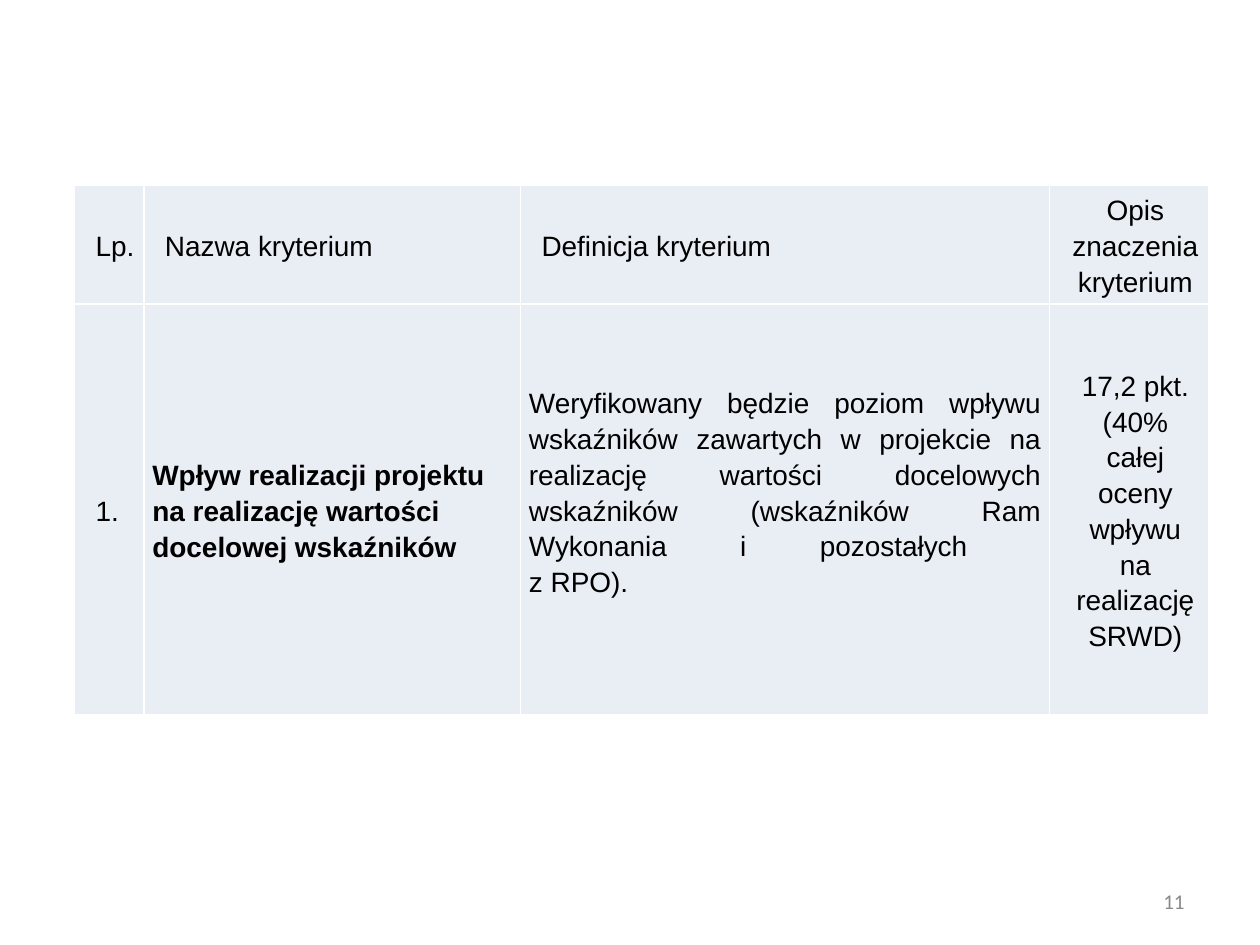
from lxml import etree
from pptx import Presentation
from pptx import util as u
from pptx.dml.color import RGBColor
from pptx.enum import text
from pptx.oxml.ns import qn

COLORS = {"cell": "E9EDF4", "border": "FFFFFF", "text": "000000", "number": "898989"}
LEFT, CENTER = text.PP_ALIGN.LEFT, text.PP_ALIGN.CENTER
RIGHT, JUSTIFY = text.PP_ALIGN.RIGHT, text.PP_ALIGN.JUSTIFY

COLUMNS = [39.6, 215.2, 302.4, 90.8]
ROWS = [68, 235]
CRITERIA = [
    [
        (["Lp."], {"indent": 7.2}),
        (["Nazwa kryterium"], {"indent": 7.2}),
        (["Definicja kryterium"], {"indent": 7.2}),
        (["Opis znaczenia kryterium"], {"indent": 7.2, "align": CENTER}),
    ],
    [
        (["1."], {"indent": 7.2}),
        (["Wpływ realizacji projektu na realizację wartości docelowej wskaźników"],
         {"bold": True}),
        (["Weryfikowany będzie poziom wpływu wskaźników zawartych w projekcie na "
          "realizację wartości docelowych wskaźników (wskaźników Ram Wykonania "
          "i pozostałych \vz RPO)."], {"align": JUSTIFY, "bottom": 21}),
        (["17,2 pkt.", "(40% całej oceny wpływu na realizację SRWD)"],
         {"indent": 7.2, "align": CENTER}),
    ],
]


def write(para, words, size=16, font="Arial", color="text", bold=False,
          align=LEFT, indent=0, spacing=1.15):
    """Fill a paragraph with formatted text."""
    para.text = words
    para.alignment = align
    para.line_spacing = spacing
    if indent:
        para._p.get_or_add_pPr().set("marL", str(u.Pt(indent)))
    for span in para.runs:
        span.font.size = u.Pt(size)
        span.font.name = font
        span.font.bold = bold
        span.font.color.rgb = RGBColor.from_string(COLORS[color])
    for line_break in para._p.findall(qn("a:br")):
        etree.SubElement(line_break, qn("a:rPr")).set("sz", str(size * 100))


class Page:
    """Hold the style and the current slide."""

    def __init__(self, deck):
        self.slide = deck.slides.add_slide(deck.slide_layouts[6])

    def label(self, words, left, top, width, height, **style):
        """Add a text box."""
        box = self.slide.shapes.add_textbox(*map(u.Pt, (left, top, width, height)))
        box.text_frame.word_wrap = True
        box.text_frame.vertical_anchor = text.MSO_ANCHOR.MIDDLE
        write(box.text_frame.paragraphs[0], words, **style)

    def table(self, rows, left, top, widths, heights):
        """Add a table of uniformly filled cells."""
        frame = self.slide.shapes.add_table(
            len(heights), len(widths),
            *map(u.Pt, (left, top, sum(widths), sum(heights))))
        table = frame.table
        for column, width in zip(table.columns, widths):
            column.width = u.Pt(width)
        for row, height in zip(table.rows, heights):
            row.height = u.Pt(height)
        for row, contents in zip(table.rows, rows):
            for cell, (lines, style) in zip(row.cells, contents):
                self.cell(cell, lines, **style)

    def cell(self, cell, lines, bottom=0, **style):
        """Format one table cell and write its lines."""
        cell.margin_left = cell.margin_right = u.Pt(4.9)
        cell.margin_top, cell.margin_bottom = u.Pt(0), u.Pt(bottom)
        cell.vertical_anchor = text.MSO_ANCHOR.MIDDLE
        self.borders(cell)
        cell.fill.solid()
        cell.fill.fore_color.rgb = RGBColor.from_string(COLORS["cell"])
        for index, line in enumerate(lines):
            frame = cell.text_frame
            write(frame.add_paragraph() if index else frame.paragraphs[0], line, **style)

    def borders(self, cell):
        """Draw the four borders of a cell."""
        properties = cell._tc.get_or_add_tcPr()
        for side in ("lnL", "lnR", "lnT", "lnB"):
            line = etree.SubElement(properties, qn(f"a:{side}"), w=str(u.Pt(1)))
            fill = etree.SubElement(line, qn("a:solidFill"))
            etree.SubElement(fill, qn("a:srgbClr"), val=COLORS["border"])


def main():
    """Build and save the slide."""
    deck = Presentation()
    deck.slide_width, deck.slide_height = u.Pt(720), u.Pt(540)
    page = Page(deck)
    page.label("11", 516, 500.5, 168, 28.8, size=12, font="Calibri",
               color="number", align=RIGHT, spacing=1.0)
    page.table(CRITERIA, 42.6, 105.7, COLUMNS, ROWS)
    deck.save("out.pptx")


if __name__ == "__main__":
    main()
